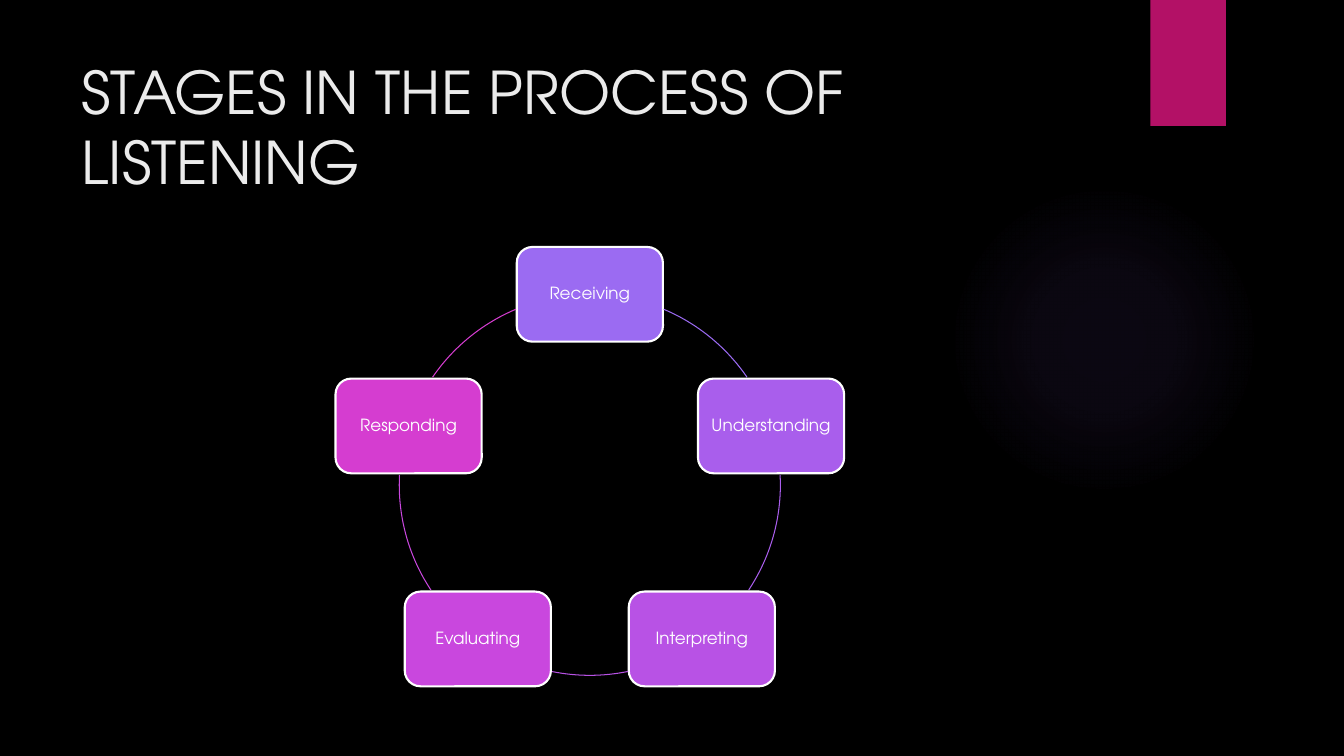
from dataclasses import dataclass
from math import cos, radians, sin

from lxml import etree
from pptx import Presentation
from pptx.dml.color import RGBColor
from pptx.enum.shapes import MSO_SHAPE
from pptx.enum.text import MSO_ANCHOR, MSO_AUTO_SIZE, PP_ALIGN
from pptx.oxml import parse_xml
from pptx.oxml.ns import nsdecls, qn
from pptx.util import Inches, Pt

ARC, OVAL = MSO_SHAPE.ARC, MSO_SHAPE.OVAL
RECTANGLE, ROUNDED = MSO_SHAPE.RECTANGLE, MSO_SHAPE.ROUNDED_RECTANGLE
TOP, MIDDLE = MSO_ANCHOR.TOP, MSO_ANCHOR.MIDDLE
LEFT, CENTER = PP_ALIGN.LEFT, PP_ALIGN.CENTER
NO_AUTOFIT = MSO_AUTO_SIZE.NONE


@dataclass(frozen=True)
class Theme:
    font: str = "TeX Gyre Adventor"
    background: str = "000000"
    heading: str = "EBEBEB"
    label: str = "FFFFFF"
    ribbon: str = "B31166"
    glow: str = "9B6BF2"
    title_size: int = 42
    label_size: int = 12
    border: float = 1.5
    ring_line: float = 0.75


RING_CENTER = (5.85, 4.81)
RING_RADIUS = 1.89
STAGE_SIZE = (1.45, 0.94)
# Name, colour, and the visible arc after it in degrees clockwise from the top
STAGES = [
    ("Receiving", "9B6BF2", 22.8, 55.6),
    ("Understanding", "A95EEC", 87, 123.5),
    ("Interpreting", "B852E5", 168.4, 191.6),
    ("Evaluating", "C947DE", 236.5, 273),
    ("Responding", "D53DD0", 304.4, 337.2),
]
GLOW_STOPS = [(0, 7), (36, 6), (69, 0)]


class SlideBuilder:
    def __init__(self, slide, theme):
        self.slide, self.theme = slide, theme
        backdrop = slide.background.fill
        backdrop.solid()
        backdrop.fore_color.rgb = RGBColor.from_string(theme.background)

    def shape(self, kind, left, top, width, height, color=None):
        """Add a preset shape without outline; no color leaves it unfilled."""
        shape = self.slide.shapes.add_shape(
            kind, *map(Inches, (left, top, width, height)))
        shape.shadow.inherit = False
        shape.line.fill.background()
        if color:
            shape.fill.solid()
            shape.fill.fore_color.rgb = RGBColor.from_string(color)
        else:
            shape.fill.background()
        return shape

    def outline(self, shape, color, width):
        shape.line.color.rgb = RGBColor.from_string(color)
        shape.line.width = Pt(width)

    def set_text(self, shape, text, size, color, align, frame_format):
        frame = shape.text_frame
        for name, value in frame_format.items():
            setattr(frame, name, value)
        frame.text = text
        paragraph = frame.paragraphs[0]
        paragraph.alignment = align
        font_format = {"name": self.theme.font, "size": Pt(size), "bold": False}
        font = paragraph.runs[0].font
        for name, value in font_format.items():
            setattr(font, name, value)
        font.color.rgb = RGBColor.from_string(color)
        return paragraph

    def title(self, text, left, top, width, height):
        title = self.slide.shapes.title
        place = {"left": left, "top": top, "width": width, "height": height}
        for name, value in place.items():
            setattr(title, name, Inches(value))
        self.set_text(title, text, self.theme.title_size, self.theme.heading,
                      LEFT, {"word_wrap": True, "auto_size": NO_AUTOFIT,
                             "vertical_anchor": TOP})

    def glow(self, left, top, diameter):
        """Add a disc that fades out from its middle."""
        disc = self.shape(OVAL, left, top, diameter, diameter)
        gradient = parse_xml(
            f'<a:gradFill {nsdecls("a")} rotWithShape="1"><a:gsLst/>'
            '<a:path path="circle"><a:fillToRect l="50000" t="50000" '
            'r="50000" b="50000"/></a:path></a:gradFill>')
        for position, opacity in GLOW_STOPS:
            stop = etree.SubElement(gradient[0], qn("a:gs"),
                                    pos=str(position * 1000))
            color = etree.SubElement(stop, qn("a:srgbClr"), val=self.theme.glow)
            etree.SubElement(color, qn("a:alpha"), val=str(opacity * 1000))
        properties = disc.element.spPr
        properties.replace(properties.find(qn("a:noFill")), gradient)

    def stage(self, name, color, angle):
        """Add a stage box centred on the ring, angle clockwise from the top."""
        width, height = STAGE_SIZE
        center_x = RING_CENTER[0] + RING_RADIUS * sin(radians(angle))
        center_y = RING_CENTER[1] - RING_RADIUS * cos(radians(angle))
        box = self.shape(ROUNDED, center_x - width / 2, center_y - height / 2,
                         width, height, color)
        self.outline(box, self.theme.label, self.theme.border)
        margins = dict.fromkeys(("margin_left", "margin_right", "margin_top",
                                 "margin_bottom"), Inches(0.05))
        label = self.set_text(box, name, self.theme.label_size,
                              self.theme.label, CENTER,
                              {"word_wrap": True, "vertical_anchor": MIDDLE,
                               **margins})
        label.line_spacing = 0.9

    def ring_arc(self, color, start, end):
        left, top = (middle - RING_RADIUS for middle in RING_CENTER)
        arc = self.shape(ARC, left, top, 2 * RING_RADIUS, 2 * RING_RADIUS)
        for index, angle in enumerate((start, end)):
            # Preset arcs count from three o'clock; one degree is 0.6 units
            arc.adjustments[index] = (angle - 90) % 360 * 0.6
        self.outline(arc, color, self.theme.ring_line)


def main():
    deck = Presentation()
    deck.slide_width, deck.slide_height = Inches(13.33), Inches(7.5)
    theme = Theme()
    builder = SlideBuilder(deck.slides.add_slide(deck.slide_layouts[5]), theme)
    builder.glow(9.41, 1.83, 3.08)
    builder.shape(RECTANGLE, 11.41, 0, 0.75, 1.25, theme.ribbon)
    builder.title("STAGES IN THE PROCESS OF LISTENING", 0.71, 0.5, 10.29, 1.53)
    for index, (name, color, start, end) in enumerate(STAGES):
        builder.stage(name, color, index * 360 / len(STAGES))
        builder.ring_arc(color, start, end)
    deck.save("out.pptx")


if __name__ == "__main__":
    main()
